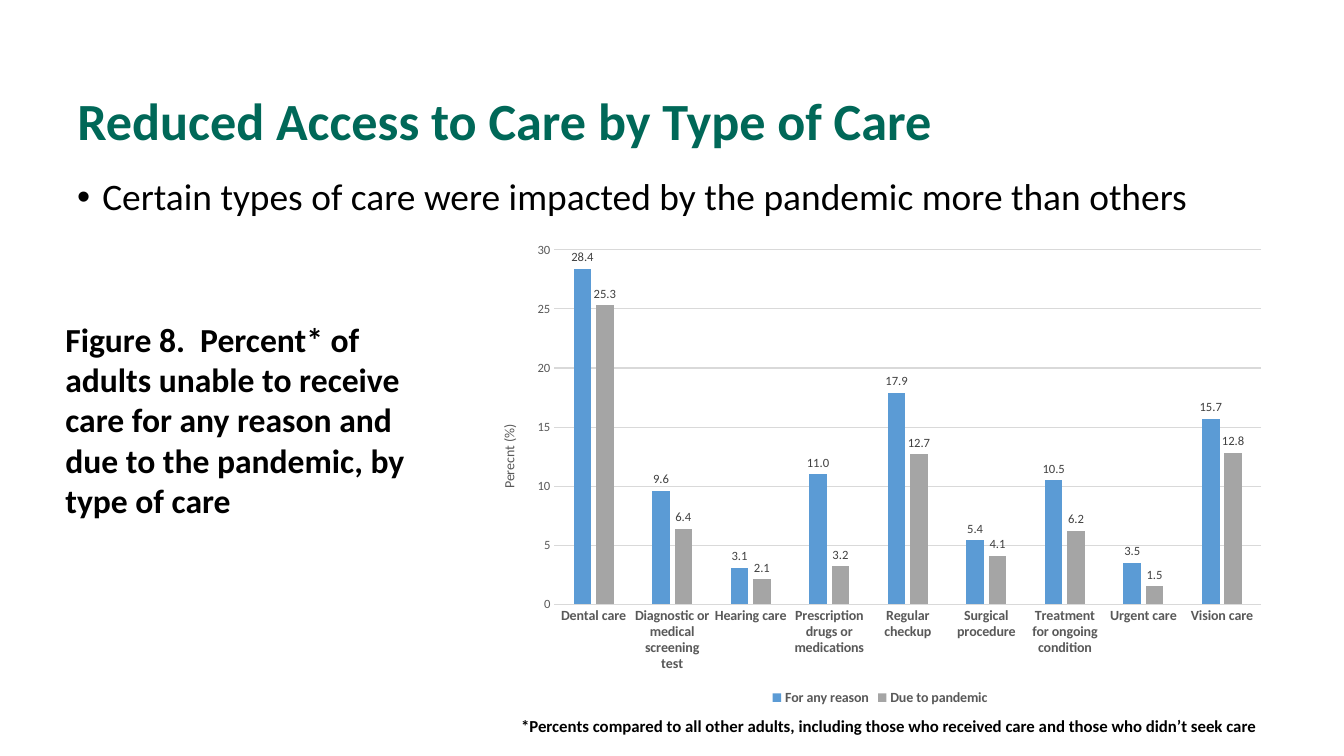
from lxml.etree import SubElement
from pptx import Presentation
from pptx.chart.data import CategoryChartData
from pptx.dml.color import RGBColor
from pptx.enum.chart import XL_CHART_TYPE, XL_LABEL_POSITION, XL_LEGEND_POSITION, XL_TICK_MARK
from pptx.enum.text import MSO_ANCHOR, PP_ALIGN
from pptx.oxml import parse_xml
from pptx.oxml.ns import nsdecls, qn
from pptx.util import Inches, Pt

WIDTH, HEIGHT = Inches(13.33), Inches(7.5)
GREEN, BLACK, AXIS_GRAY, LABEL_GRAY, GRID_GRAY = "006858", "000000", "595959", "404040", "D9D9D9"

CARE_TYPES = [
    "Dental care", "Diagnostic or medical screening test", "Hearing care",
    "Prescription drugs or medications", "Regular checkup", "Surgical procedure",
    "Treatment for ongoing condition", "Urgent care", "Vision care",
]
SERIES = [
    ("For any reason", "5B9BD5", [28.4, 9.6, 3.1, 11, 17.9, 5.4, 10.5, 3.5, 15.7]),
    ("Due to pandemic", "A5A5A5", [25.3, 6.4, 2.1, 3.2, 12.7, 4.1, 6.2, 1.5, 12.8]),
]
PLOT_SHARES = {"x": 0.09, "y": 0.04, "w": 0.89, "h": 0.74}


def color(hex_value):
    return RGBColor.from_string(hex_value)


def share_box(left, top, width, height):
    return [int(total * percent / 100) for total, percent in
            zip((WIDTH, HEIGHT, WIDTH, HEIGHT), (left, top, width, height))]


def set_attributes(target, **values):
    for name, value in values.items():
        setattr(target, name, value)


def format_font(font, size, hex_value, bold=False):
    set_attributes(font, name="Calibri", size=Pt(size), bold=bold)
    font.color.rgb = color(hex_value)


def write_text(shape, text, size, hex_value=BLACK, bold=False, wrap=True,
               anchor=MSO_ANCHOR.TOP, **paragraph_format):
    frame = shape.text_frame
    set_attributes(frame, word_wrap=wrap, vertical_anchor=anchor)
    paragraph = frame.paragraphs[0]
    set_attributes(paragraph, alignment=PP_ALIGN.LEFT, **paragraph_format)
    run = paragraph.add_run()
    run.text = text
    format_font(run.font, size, hex_value, bold)
    return paragraph


def add_title(slide, text, box):
    title = slide.shapes.title
    set_attributes(title, **dict(zip(("left", "top", "width", "height"), box)))
    write_text(title, text, 37.3, GREEN, True, anchor=MSO_ANCHOR.BOTTOM, line_spacing=Pt(40))


def add_text(slide, text, box, size, **options):
    return write_text(slide.shapes.add_textbox(*box), text, size, **options)


def add_bullet(paragraph):
    properties = paragraph._p.get_or_add_pPr()
    indent = Inches(0.25)
    properties.set("marL", str(indent))
    properties.set("indent", str(-indent))
    SubElement(properties, qn("a:buFont"), typeface="Arial")
    SubElement(properties, qn("a:buChar"), char="•")


def format_line(line, hex_value):
    line.color.rgb = color(hex_value)
    line.width = Pt(0.75)


def format_axes(chart):
    category_axis, value_axis = chart.category_axis, chart.value_axis
    for axis, size, bold in ((category_axis, 10, True), (value_axis, 9, False)):
        set_attributes(axis, major_tick_mark=XL_TICK_MARK.NONE, minor_tick_mark=XL_TICK_MARK.NONE)
        format_font(axis.tick_labels.font, size, AXIS_GRAY, bold)
    format_line(category_axis.format.line, GRID_GRAY)
    set_attributes(value_axis, minimum_scale=0, maximum_scale=30, major_unit=5)
    value_axis.format.line.fill.background()
    format_line(value_axis.major_gridlines.format.line, GRID_GRAY)
    paragraph = value_axis.axis_title.text_frame.paragraphs[0]
    run = paragraph.add_run()
    run.text = "Perecnt (%)"
    format_font(run.font, 10, AXIS_GRAY)


def format_series(series, hex_value):
    series.format.fill.solid()
    series.format.fill.fore_color.rgb = color(hex_value)
    labels = series.data_labels
    set_attributes(labels, show_value=True, number_format="#,##0.0",
                   number_format_is_linked=False, position=XL_LABEL_POSITION.OUTSIDE_END)
    format_font(labels.font, 9, LABEL_GRAY)


def place_plot(chart):
    plot_area = chart._chartSpace.chart.plotArea
    for layout in plot_area.findall(qn("c:layout")):
        plot_area.remove(layout)
    sizes = "".join(f'<c:{name} val="{share}"/>' for name, share in PLOT_SHARES.items())
    plot_area.insert(0, parse_xml(
        f'<c:layout {nsdecls("c")}><c:manualLayout><c:layoutTarget val="inner"/>'
        f'<c:xMode val="edge"/><c:yMode val="edge"/>{sizes}</c:manualLayout></c:layout>'))


def add_care_chart(slide, box):
    data = CategoryChartData()
    data.categories = CARE_TYPES
    for name, _, values in SERIES:
        data.add_series(name, values)
    chart = slide.shapes.add_chart(XL_CHART_TYPE.COLUMN_CLUSTERED, *box, data).chart
    format_font(chart.font, 10, BLACK)
    set_attributes(chart, has_title=False, has_legend=True)
    set_attributes(chart.legend, position=XL_LEGEND_POSITION.BOTTOM, include_in_layout=False)
    format_font(chart.legend.font, 10, AXIS_GRAY, True)
    plot = chart.plots[0]
    set_attributes(plot, gap_width=219, overlap=-27, vary_by_categories=False)
    for series, (_, hex_value, _) in zip(plot.series, SERIES):
        format_series(series, hex_value)
    format_axes(chart)
    place_plot(chart)


def main():
    presentation = Presentation()
    set_attributes(presentation, slide_width=WIDTH, slide_height=HEIGHT)
    slide = presentation.slides.add_slide(presentation.slide_layouts[5])
    add_title(slide, "Reduced Access to Care by Type of Care", share_box(5, 4, 90, 16.67))
    add_bullet(add_text(
        slide, "Certain types of care were impacted by the pandemic more than others",
        share_box(5, 22.93, 90, 8), 26.7, line_spacing=0.9, space_before=Pt(10)))
    add_care_chart(slide, share_box(35.93, 30.53, 59.1, 63.33))
    add_text(
        slide, "Figure 8.  Percent* of adults unable to receive care for any reason "
        "and due to the pandemic, by type of care",
        share_box(4.13, 41.47, 28.88, 28.27), 24, bold=True)
    add_text(
        slide, "*Percents compared to all other adults, including those who received care "
        "and those who didn’t seek care",
        share_box(38.03, 94, 56.94, 4), 12, bold=True, wrap=False)
    presentation.save("out.pptx")


if __name__ == "__main__":
    main()
